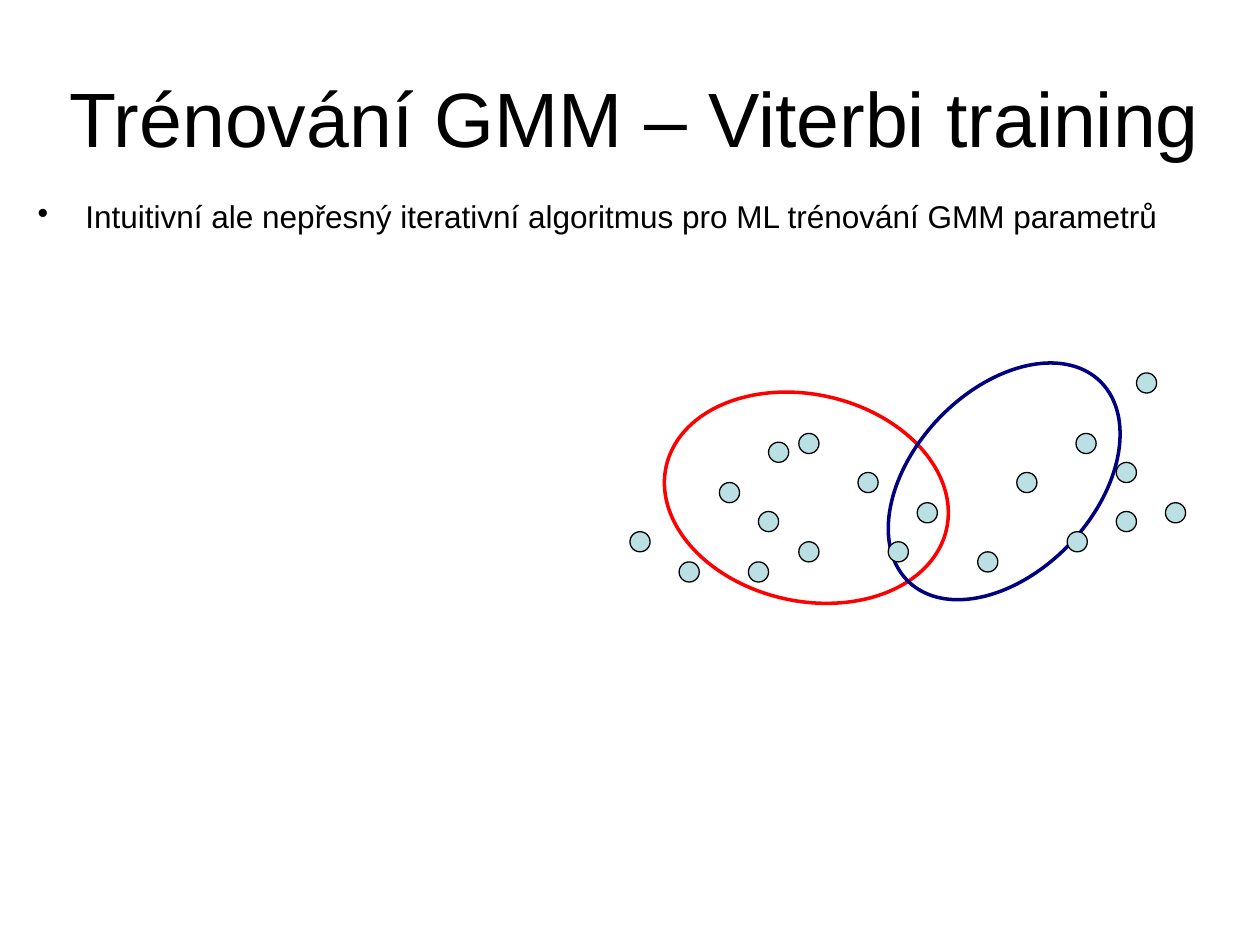
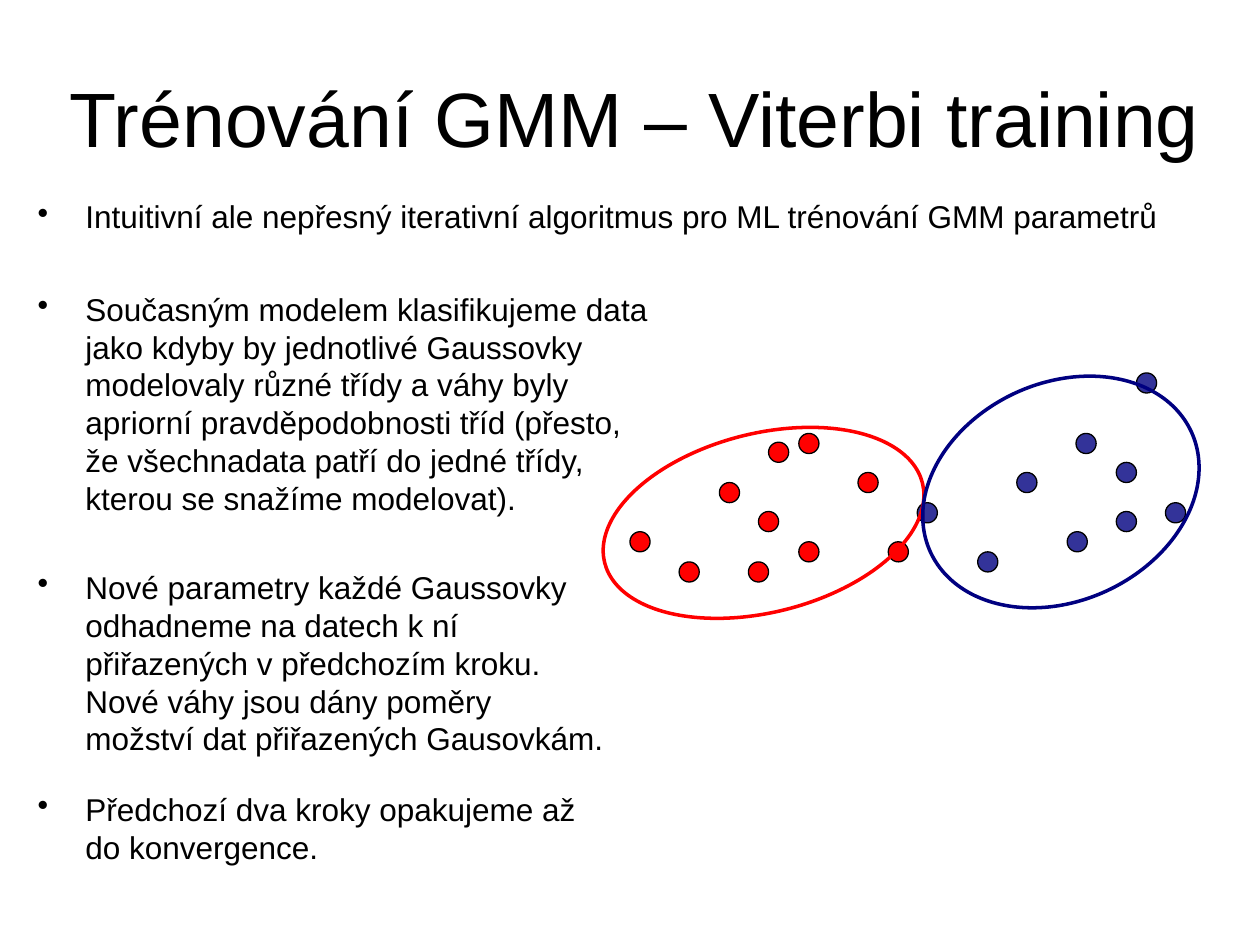
from typing import NamedTuple

from lxml.etree import SubElement
from pptx import Presentation
from pptx.dml.color import RGBColor
from pptx.enum.shapes import MSO_SHAPE
from pptx.enum.text import MSO_ANCHOR, PP_ALIGN
from pptx.oxml.ns import qn
from pptx.util import Inches, Pt

FONT = "Arial"
BLACK, RED, NAVY = "000000", "FF0000", "000080"
UNASSIGNED, INDIGO = "BBE0E3", "333399"
DOT_SIZE = 0.16
INDENT = 0.38


class Box(NamedTuple):
    left: float
    top: float
    width: float
    height: float


class Gaussian(NamedTuple):
    box: Box
    rotation: float
    color: str


class Bullet(NamedTuple):
    box: Box
    text: str
    line_spacing: float = 1.0


TITLE = "Trénování GMM – Viterbi training"
TITLE_BOX = Box(0.33, 0.3, 9.42, 1.25)

INTRO = Bullet(
    Box(0.2, 1.55, 9.21, 0.43),
    "Intuitivní ale nepřesný iterativní algoritmus pro ML trénování GMM parametrů",
    0.9,
)
STEPS = [
    Bullet(
        Box(0.2, 2.25, 5.12, 1.92),
        "Současným modelem klasifikujeme data jako kdyby by jednotlivé Gaussovky "
        "modelovaly různé třídy a váhy byly apriorní pravděpodobnosti tříd (přesto, "
        "že všechnadata patří do jedné třídy, kterou se snažíme modelovat).",
    ),
    Bullet(
        Box(0.2, 4.46, 4.7, 1.62),
        "Nové parametry každé Gaussovky odhadneme na datech k ní přiřazených "
        "v předchozím kroku. Nové váhy jsou dány poměry možství dat přiřazených "
        "Gausovkám.",
    ),
    Bullet(
        Box(0.2, 6.22, 4.57, 0.71),
        "Předchozí dva kroky opakujeme až do konvergence.",
    ),
]

# Top left corners of the data points, by the Gaussian they end up in
RED_POINTS = [
    (5, 4.22), (5.39, 4.46), (5.71, 3.83), (5.94, 4.46), (6.02, 4.06), (6.1, 3.51),
    (6.34, 3.44), (6.34, 4.3), (6.81, 3.75), (7.05, 4.3),
]
BLUE_POINTS = [
    (7.28, 3.99), (7.76, 4.38), (8.07, 3.75), (8.47, 4.22), (8.54, 3.44),
    (8.86, 3.67), (8.86, 4.06), (9.02, 2.96), (9.25, 3.99),
]
INITIAL_MODEL = [
    Gaussian(Box(5.26, 3.13, 2.28, 1.64), 12.7, RED),
    Gaussian(Box(6.87, 3.1, 2.2, 1.44), 313.5, NAVY),
]
UPDATED_MODEL = [
    Gaussian(Box(4.76, 3.44, 2.6, 1.42), 345.9, RED),
    Gaussian(Box(7.28, 3.04, 2.28, 1.73), 335.2, NAVY),
]


def rgb(color: str) -> RGBColor:
    return RGBColor.from_string(color)


def lengths(box: Box) -> list:
    return [Inches(value) for value in box]


def add_text(slide, box: Box, text: str, size: float):
    """Add a wrapped text box; return its frame and paragraph."""
    frame = slide.shapes.add_textbox(*lengths(box)).text_frame
    frame.word_wrap = True
    paragraph = frame.paragraphs[0]
    paragraph.text = text
    paragraph.font.name = FONT
    paragraph.font.size = Pt(size)
    paragraph.font.color.rgb = rgb(BLACK)
    return frame, paragraph


def add_title(slide) -> None:
    frame, paragraph = add_text(slide, TITLE_BOX, TITLE, 44)
    frame.vertical_anchor = MSO_ANCHOR.MIDDLE
    paragraph.alignment = PP_ALIGN.CENTER


def add_bullet(slide, bullet: Bullet) -> None:
    _, paragraph = add_text(slide, bullet.box, bullet.text, 18)
    paragraph.line_spacing = bullet.line_spacing
    # Hanging indent with a round bullet
    properties = paragraph._p.get_or_add_pPr()
    properties.set("marL", str(Inches(INDENT)))
    properties.set("indent", str(-Inches(INDENT)))
    mark = SubElement(properties, qn("a:buChar"))
    mark.set("char", "•")
    properties.insert_element_before(mark, "a:tabLst", "a:defRPr", "a:extLst")


def add_ellipse(slide, box: Box, line: str, weight: float):
    ellipse = slide.shapes.add_shape(MSO_SHAPE.OVAL, *lengths(box))
    ellipse.shadow.inherit = False
    ellipse.fill.background()
    ellipse.line.color.rgb = rgb(line)
    ellipse.line.width = Pt(weight)
    return ellipse


def add_points(slide, points: list[tuple[float, float]], color: str) -> None:
    for left, top in points:
        dot = add_ellipse(slide, Box(left, top, DOT_SIZE, DOT_SIZE), BLACK, 0.75)
        dot.fill.solid()
        dot.fill.fore_color.rgb = rgb(color)


def add_model(slide, model: list[Gaussian]) -> None:
    for gaussian in model:
        outline = add_ellipse(slide, gaussian.box, gaussian.color, 2)
        outline.rotation = gaussian.rotation


def add_training_slide(deck):
    slide = deck.slides.add_slide(deck.slide_layouts[6])
    add_title(slide)
    add_bullet(slide, INTRO)
    return slide


def main() -> None:
    deck = Presentation()
    deck.slide_width, deck.slide_height = Inches(10), Inches(7.5)

    # Initial model over unassigned data
    initial = add_training_slide(deck)
    add_model(initial, INITIAL_MODEL)
    add_points(initial, RED_POINTS + BLUE_POINTS, UNASSIGNED)

    # Classified data, updated model and the steps
    updated = add_training_slide(deck)
    add_points(updated, RED_POINTS, RED)
    add_points(updated, BLUE_POINTS, INDIGO)
    add_model(updated, UPDATED_MODEL)
    for step in STEPS:
        add_bullet(updated, step)

    deck.save("out.pptx")


if __name__ == "__main__":
    main()
